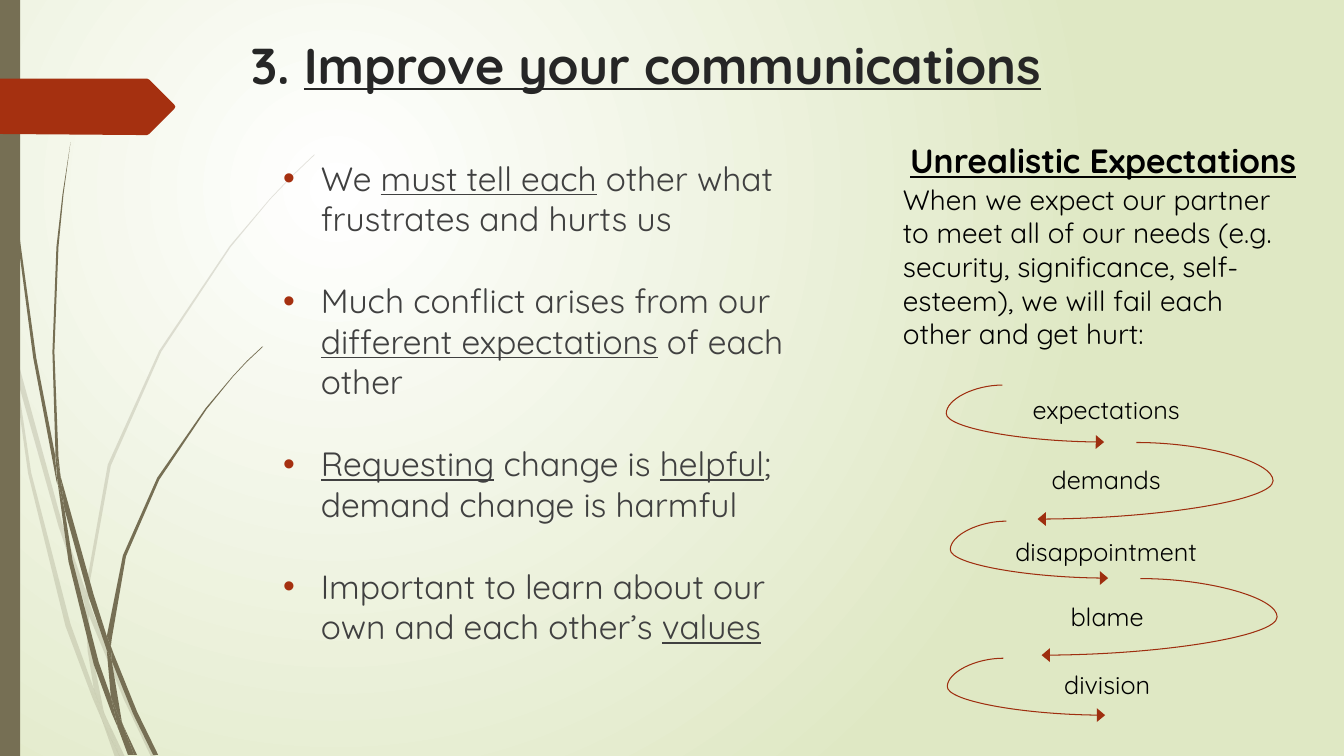
from pptx import Presentation, oxml
from pptx import util as u
from pptx.dml.color import RGBColor
from pptx.enum import shapes, text
from pptx.oxml import ns

PX = 4572
OLIVE = RGBColor(0x76, 0x6F, 0x54)
RUST = RGBColor(0xA5, 0x30, 0x10)
LOOP = RGBColor(0x9E, 0x2E, 0x0F)
INK = RGBColor(0x26, 0x26, 0x26)
GREY = RGBColor(0x40, 0x40, 0x40)
BLACK = RGBColor(0, 0, 0)
WHITE = RGBColor(0xFF, 0xFF, 0xFF)
MIST = RGBColor(0xDF, 0xE8, 0xC4)
FONT = "Quicksand"

PALE_BLADES = [
    [(22, 700), (18, 644), (0, 564), (0, 598), (20, 688)],
    [(116, 1044), (168, 1198), (170, 1172), (124, 1040), (28, 690), (34, 752)],
    [(184, 1214), (176, 1192), (176, 1220), (246, 1388), (300, 1502), (310, 1502),
     (254, 1384)],
    [(238, 1502), (248, 1502), (210, 1422)],
    [(186, 1366), (140, 1238), (62, 938), (34, 752), (22, 700), (56, 940), (130, 1242),
     (184, 1386), (202, 1428), (198, 1414)],
    [(168, 1198), (174, 1292), (186, 1366), (192, 1384), (210, 1422), (206, 1412),
     (182, 1292), (176, 1220), (176, 1216)],
    [(176, 1168), (220, 924), (320, 698), (458, 490), (536, 396), (580, 350),
     (624, 308), (624, 306), (578, 350), (536, 394), (456, 488), (316, 696),
     (214, 922), (170, 1168), (170, 1172), (176, 1192)],
    [(202, 1428), (228, 1502), (238, 1502)],
    [(176, 1216), (176, 1220), (176, 1192), (170, 1172), (168, 1198)],
    [(192, 1384), (186, 1366), (198, 1414), (202, 1428), (238, 1502), (210, 1422)],
]
DARK_BLADES = [
    [(14, 220), (34, 466), (66, 710), (112, 954), (114, 962), (110, 914), (110, 906),
     (72, 710), (38, 464), (16, 218), (10, 96), (8, 0), (6, 0), (8, 96)],
    [(176, 1184), (212, 1290), (212, 1266), (212, 1262), (186, 1180), (120, 944),
     (128, 1010)],
    [(226, 1298), (220, 1282), (222, 1312), (264, 1416), (304, 1498), (314, 1498),
     (272, 1412)],
    [(220, 1382), (196, 1314), (144, 1112), (128, 1010), (114, 954), (136, 1114),
     (186, 1318), (222, 1416), (234, 1444), (232, 1434)],
    [(120, 944), (116, 906), (108, 698), (116, 490), (126, 386), (140, 282), (124, 386),
     (112, 490), (104, 698), (110, 898)],
    [(266, 1498), (272, 1498), (244, 1438)],
    [(114, 954), (128, 1010), (120, 944), (110, 898), (110, 906)],
    [(222, 1266), (250, 1104), (316, 952), (410, 812), (462, 748), (490, 718),
     (522, 688), (520, 688), (490, 716), (462, 746), (408, 810), (312, 948),
     (244, 1102), (212, 1262), (220, 1282)],
    [(234, 1444), (254, 1498), (262, 1498)],
    [(212, 1290), (220, 1382), (232, 1412), (244, 1438), (242, 1432), (222, 1312),
     (218, 1302)],
    [(212, 1290), (218, 1302), (222, 1312), (220, 1282), (212, 1262), (212, 1266)],
    [(232, 1412), (220, 1382), (232, 1434), (234, 1444), (260, 1498), (266, 1498),
     (244, 1438)],
]
RIBBON = [(346, 216), (296, 266), (292, 268), (272, 268), (0, 266), (0, 156),
          (272, 156), (292, 156), (296, 158), (346, 208), (348, 212)]
ADVICE = [
    [("We ", False), ("must tell each", True),
     (" other what frustrates and hurts us", False)],
    [("Much conflict arises from our ", False), ("different expectations", True),
     (" of each other", False)],
    [("Requesting", True), (" change is ", False), ("helpful", True),
     ("; demand change is harmful", False)],
    [("Important to learn about our own and each other’s ", False), ("values", True)],
]
STAGES = [
    ("expectations", 0, 8, 12, 0),
    ("demands", 0, 147, 278, 114),
    ("disappointment", 0, 290, 20, 270),
    ("blame", 2, 419, 286, 384),
    ("division", 2, 554, 14, 542),
]
TURNS = [(202, 113, -55100), (-196, 152, -138500)]
EXPECTATION = ("When we expect our partner to meet all of our needs (e.g. security, "
               "significance, self-esteem), we will fail each other and get hurt:")


def emu(*lengths):
    return [v * PX for v in lengths]


def apply(target, values):
    for name, value in values.items():
        setattr(target, name, value)


def add_xml(parent, tag, inner="", **attrs):
    listed = " ".join(f'{k}="{v}"' for k, v in attrs.items())
    parent.append(oxml.parse_xml(f'<a:{tag} {ns.nsdecls("a")} {listed}>{inner}</a:{tag}>'))


def paint(sp, color):
    sp.shadow.inherit = False
    sp.fill.solid()
    sp.fill.fore_color.rgb = color
    sp.line.fill.background()


def write(s, box, paragraphs, size, color, bold=False, spacing=None):
    tf = s.shapes.add_textbox(*emu(*box)).text_frame
    apply(tf, {"word_wrap": True, "vertical_anchor": text.MSO_ANCHOR.TOP})
    for i, runs in enumerate(paragraphs):
        p = tf.add_paragraph() if i else tf.paragraphs[0]
        apply(p, spacing or {})
        for words, underline in runs:
            r = p.add_run()
            r.text = words
            apply(r.font, {"name": FONT, "size": u.Pt(size), "bold": bold,
                           "underline": underline})
            r.font.color.rgb = color
    return tf


def outline(s, box, points, color):
    start, *rest = [emu(box[0] + x, box[1] + y) for x, y in points]
    builder = s.shapes.build_freeform(*start)
    builder.add_line_segments(rest, close=True)
    sp = builder.convert_to_shape()
    paint(sp, color)
    return sp


def backdrop(s, box):
    stops = "".join(f'<a:gs pos="{pos}"><a:srgbClr val="{c}"/></a:gs>'
                    for pos, c in ((0, WHITE), (100000, MIST)))
    s.element.cSld.insert(0, oxml.parse_xml(
        f'<p:bg {ns.nsdecls("p", "a")}><p:bgPr><a:gradFill rotWithShape="1">'
        f'<a:gsLst>{stops}</a:gsLst><a:path path="circle">'
        '<a:fillToRect l="50000" t="50000" r="100000" b="100000"/></a:path>'
        '</a:gradFill><a:effectLst/></p:bgPr></p:bg>'))
    for blades, opacity in ((PALE_BLADES, 20), (DARK_BLADES, 100)):
        grass = s.shapes.add_group_shape()
        for points in blades:
            sp = outline(grass, box, points, OLIVE)
            if opacity < 100:
                add_xml(sp.element.spPr.find(".//" + ns.qn("a:srgbClr")), "alpha",
                        val=opacity * 1000)
    x, y, w, h = box
    paint(s.shapes.add_shape(shapes.MSO_SHAPE.RECTANGLE, *emu(x, y, 40, h)), OLIVE)
    outline(s, box, RIBBON, RUST)


def title(s, box):
    write(s, box, [[("3. ", False), ("Improve your communications", True)]], 36, INK, True)


def advice(s, box):
    tf = write(s, box, ADVICE, 24, GREY,
               spacing={"space_before": u.Pt(6), "space_after": u.Pt(24)})
    indent = 75 * PX
    for p in tf.paragraphs:
        pPr = p._p.get_or_add_pPr()
        pPr.set("marL", str(indent))
        pPr.set("indent", str(-indent))
        add_xml(pPr, "buClr", f'<a:srgbClr val="{RUST}"/>')
        add_xml(pPr, "buFont", typeface="Arial")
        add_xml(pPr, "buChar", char="•")


def expectation(s, box):
    x, y, w, h = box
    group = s.shapes.add_group_shape()
    write(group, (x, y, w, 100), [[("Unrealistic Expectations", True)]], 24, BLACK, True,
          {"alignment": text.PP_ALIGN.CENTER})
    write(group, (x + 12, y + 84, w - 40, h - 84), [[(EXPECTATION, False)]], 20, BLACK)


def spiral(s, box):
    left, top, w, h = box
    for i, (word, shift, word_y, x, y) in enumerate(STAGES):
        dx, dy, bend = TURNS[i % 2]
        x, y = left + x, top + y
        group = s.shapes.add_group_shape()
        c = group.shapes.add_connector(shapes.MSO_CONNECTOR.CURVE,
                                       *emu(x, y, x + dx, y + dy))
        c.line.color.rgb = LOOP
        c.line.width = u.Pt(0.75)
        add_xml(c.get_or_add_ln(), "tailEnd", type="triangle", w="lg", len="med")
        spPr = c.element.spPr
        add_xml(spPr, "effectLst")
        geometry = spPr.find(ns.qn("a:prstGeom"))
        for old in list(geometry):
            geometry.remove(old)
        add_xml(geometry, "avLst", f'<a:gd name="adj1" fmla="val {bend}"/>')
        write(group, (left + shift, top + word_y, w, 80), [[(word, False)]], 18, BLACK,
              spacing={"alignment": text.PP_ALIGN.CENTER})


def main():
    prs = Presentation()
    prs.slide_width, prs.slide_height = emu(2667, 1500)
    s = prs.slides.add_slide(prs.slide_layouts[6])
    backdrop(s, (0, 0, 2667, 1500))
    title(s, (478, 57, 1950, 210))
    advice(s, (542, 303, 1096, 1090))
    expectation(s, (1760, 268, 858, 440))
    spiral(s, (1977, 764, 436, 654))
    prs.save("out.pptx")


if __name__ == "__main__":
    main()
